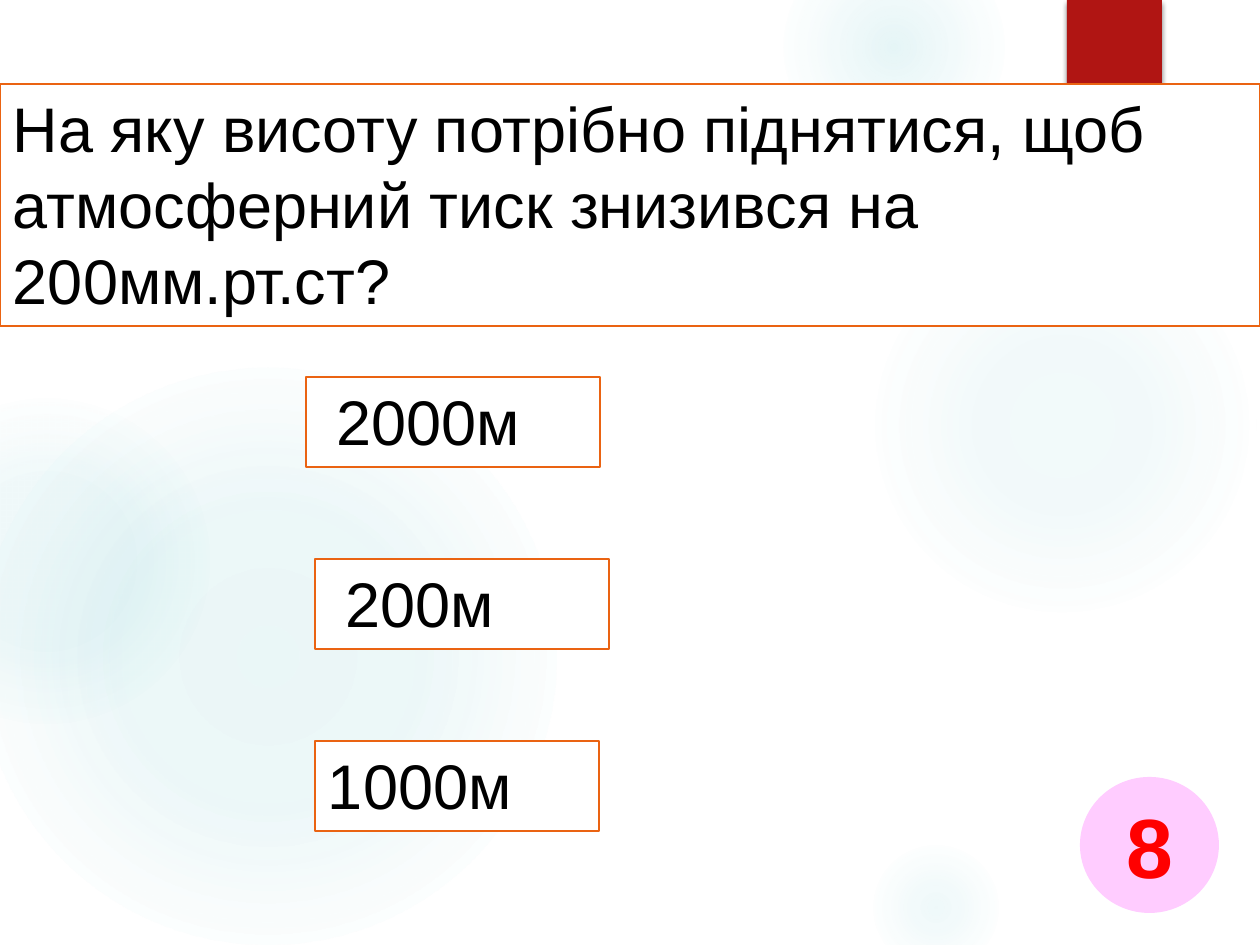
import pptx
import pptx.dml.color
import pptx.enum.shapes
import pptx.enum.text
import pptx.oxml
import pptx.oxml.ns
import pptx.util

RGB = pptx.dml.color.RGBColor
SHAPE = pptx.enum.shapes.MSO_SHAPE
ALIGN = pptx.enum.text.PP_ALIGN
ANCHOR = pptx.enum.text.MSO_ANCHOR
NS = pptx.oxml.ns.nsdecls("a")

WHITE = RGB(0xFF, 0xFF, 0xFF)
BLACK = RGB(0x00, 0x00, 0x00)
ORANGE = RGB(0xEA, 0x63, 0x12)
CRIMSON = RGB(0xB0, 0x15, 0x13)
PINK = RGB(0xFF, 0xCC, 0xFF)
RED = RGB(0xFF, 0x00, 0x00)
TEAL = RGB(0x4C, 0xB9, 0xC3)

PX_PER_INCH = 126
FONT = "Arial"
PAD_X, PAD_Y = 13, 6


def px(n):
    return pptx.util.Emu(round(n * 914400 / PX_PER_INCH))


def add_shape(s, kind, box, fill=None, line=None):
    sp = s.shapes.add_shape(kind, *[px(n) for n in box])
    sp.shadow.inherit = False
    if fill is None:
        sp.fill.background()
    else:
        sp.fill.solid()
        sp.fill.fore_color.rgb = fill
    if line is None:
        sp.line.fill.background()
    else:
        sp.line.color.rgb = line
        sp.line.width = pptx.util.Pt(1.5)
    return sp


def write(sp, lines, size, color, align=ALIGN.LEFT, anchor=ANCHOR.TOP,
          bold=False, indent=0):
    tf = sp.text_frame
    tf.word_wrap = True
    tf.vertical_anchor = anchor
    tf.margin_left, tf.margin_right = px(PAD_X + indent), px(PAD_X)
    tf.margin_top = tf.margin_bottom = px(PAD_Y)
    for i, line in enumerate(lines):
        p = tf.add_paragraph() if i else tf.paragraphs[0]
        p.alignment = align
        r = p.add_run()
        r.text = line
        r.font.name = FONT
        r.font.size = pptx.util.Pt(size)
        r.font.bold = bold
        r.font.color.rgb = color


def add_glow(s, x, y, size, stops):
    """A soft circle; stops are (position %, opacity %) from the centre out."""
    sp = add_shape(s, SHAPE.OVAL, (x, y, size, size))
    gs = "".join(
        f'<a:gs pos="{pos * 1000}"><a:srgbClr val="{TEAL}">'
        f'<a:alpha val="{alpha * 1000}"/></a:srgbClr></a:gs>'
        for pos, alpha in stops)
    grad = pptx.oxml.parse_xml(
        f'<a:gradFill {NS} rotWithShape="1"><a:gsLst>{gs}</a:gsLst>'
        '<a:path path="circle"><a:fillToRect l="50000" t="50000" '
        'r="50000" b="50000"/></a:path></a:gradFill>')
    spPr = sp.element.spPr
    spPr.replace(spPr.find(pptx.oxml.ns.qn("a:noFill")), grad)


def add_backdrop(s):
    # x, y, size, opacity at centre, opacity at 36 %, position of the fade-out
    glows = [
        (868, 231, 388, 7, 6, 69),
        (784, -63, 220, 14, 7, 73),
        (868, 840, 136, 9, 5, 66),
        (-21, 368, 577, 11, 10, 75),
        (-116, 399, 325, 8, 8, 72),
    ]
    for x, y, size, centre, middle, fade in glows:
        add_glow(s, x, y, size, [(0, centre), (36, middle), (fade, 0), (100, 0)])


def add_tab(s, box):
    sp = add_shape(s, SHAPE.RECTANGLE, box, CRIMSON)
    effects = sp.element.spPr.find(pptx.oxml.ns.qn("a:effectLst"))
    effects.append(pptx.oxml.parse_xml(
        f'<a:outerShdw {NS} blurRad="38100" dist="25400" dir="5400000" '
        'rotWithShape="0"><a:srgbClr val="000000"><a:alpha val="45000"/>'
        '</a:srgbClr></a:outerShdw>'))


def add_panel(s, box, lines, indent=0):
    sp = add_shape(s, SHAPE.RECTANGLE, box, WHITE, ORANGE)
    write(sp, lines, 36, BLACK, indent=indent)


def add_badge(s, box, number):
    sp = add_shape(s, SHAPE.OVAL, box, PINK)
    write(sp, [number], 48, RED, ALIGN.CENTER, ANCHOR.MIDDLE, bold=True)


def add_answers(s, x, y, step, height, answers):
    for i, (dx, width, indent, text) in enumerate(answers):
        add_panel(s, (x + dx, y + i * step, width, height), [text], indent)


def main():
    prs = pptx.Presentation()
    prs.slide_width, prs.slide_height = px(1260), px(945)
    s = prs.slides.add_slide(prs.slide_layouts[6])
    s.background.fill.solid()
    s.background.fill.fore_color.rgb = WHITE

    # Background decoration
    add_backdrop(s)
    add_tab(s, (1067, 0, 95, 151))

    # Question
    add_panel(s, (0, 84, 1260, 242), [
        "На яку висоту потрібно піднятися, щоб атмосферний тиск знизився на",
        "200мм.рт.ст?",
    ])

    # Question number
    add_badge(s, (1080, 777, 139, 136), "8")

    # Answers: offset, width, text indent, text
    add_answers(s, 306, 377, 182, 90, [
        (0, 294, 17, "2000м"),
        (9, 294, 17, "200м"),
        (9, 284, 0, "1000м"),
    ])

    prs.save("out.pptx")


if __name__ == "__main__":
    main()
